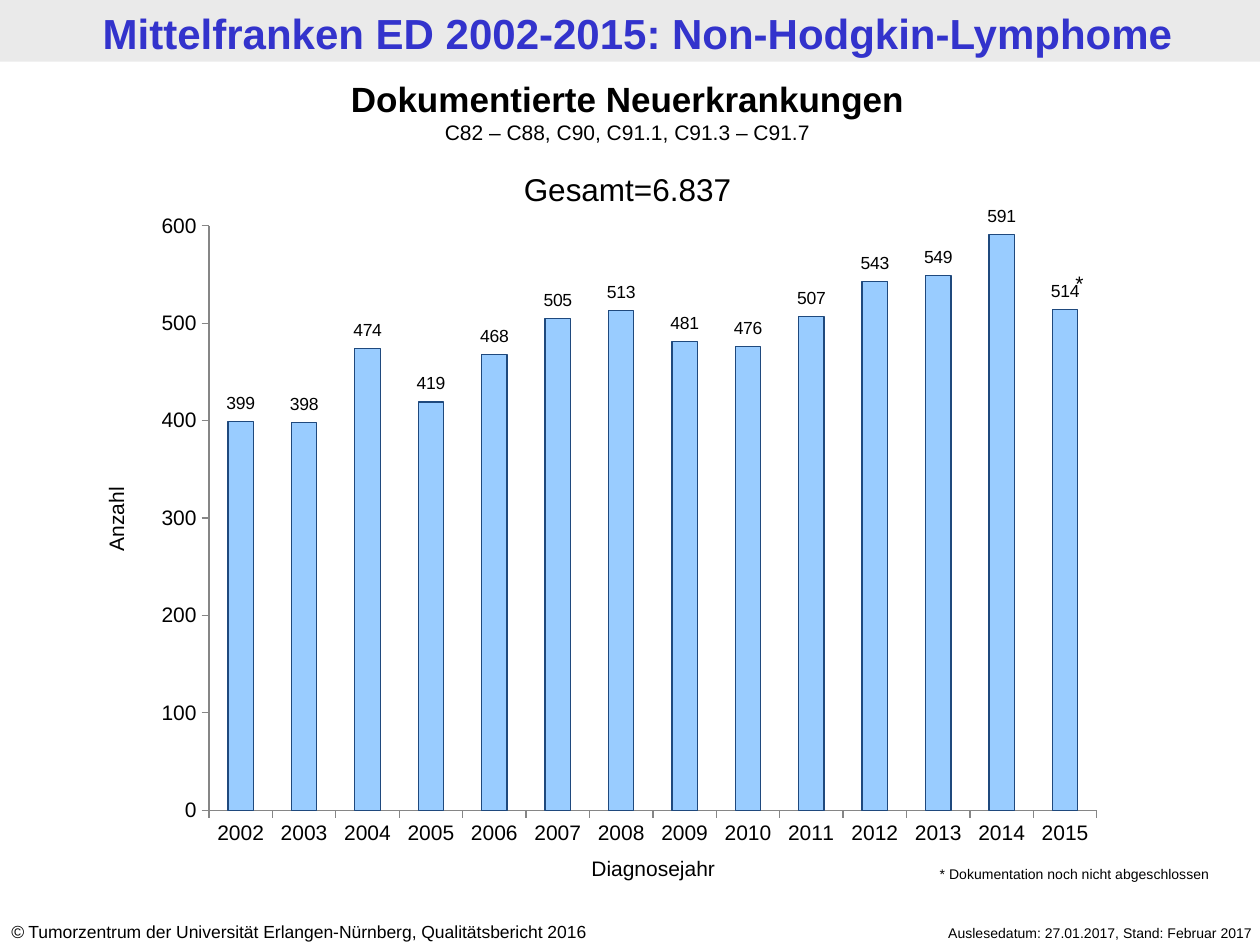
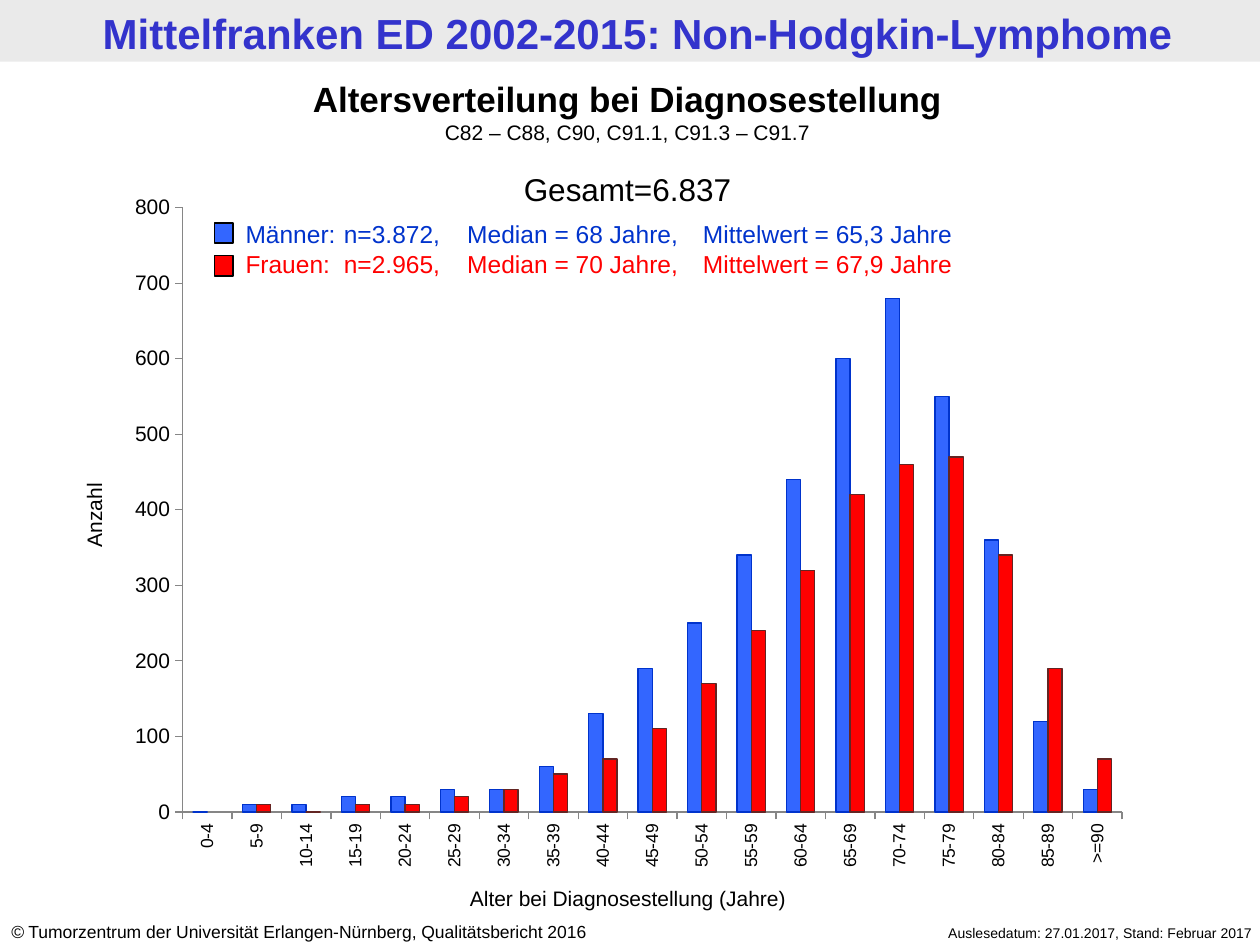
from lxml import etree
from pptx import Presentation
from pptx.chart import data as chart_data
from pptx.dml import color
from pptx.enum import chart as charts, shapes, text
from pptx.oxml import ns, xmlchemy
from pptx.util import Pt

FONT = "Arial"
BLACK, WHITE, BAND, TITLE, AXIS = "000000", "FFFFFF", "EAEAEA", "3333CC", "868686"
MEN, MEN_DARK, WOMEN, WOMEN_DARK = "3366FF", "0033CC", "FF0000", "632523"
CASES, CASES_DARK = "99CCFF", "1F497D"
LEFT, CENTER, RIGHT = text.PP_ALIGN.LEFT, text.PP_ALIGN.CENTER, text.PP_ALIGN.RIGHT
LABEL_RISE = 0.028


def rgb(value):
    return color.RGBColor.from_string(value)


def points(*lengths):
    return [Pt(length) for length in lengths]


def style(para, size, fill=BLACK, bold=False, align=LEFT):
    para.alignment = align
    para.font.name = FONT
    para.font.size = Pt(size)
    para.font.bold = bold
    para.font.color.rgb = rgb(fill)


def add_text(page, place, wording, size, align=LEFT, rotation=0):
    box = page.shapes.add_textbox(*points(*place))
    box.rotation = rotation
    box.text_frame.word_wrap = True
    para = box.text_frame.paragraphs[0]
    para.text = wording
    style(para, size, align=align)
    return box


def add_rectangle(page, place, fill, line=None):
    box = page.shapes.add_shape(shapes.MSO_SHAPE.RECTANGLE, *points(*place))
    box.shadow.inherit = False
    box.fill.solid()
    box.fill.fore_color.rgb = rgb(fill)
    if line:
        box.line.color.rgb = rgb(line)
        box.line.width = Pt(0.75)
    else:
        box.line.fill.background()
    return box


def add_title(page, wording):
    band = add_rectangle(page, (0, 0, 720, 35.3), BAND)
    page.shapes._spTree.insert(2, band._element)
    title = page.shapes.title
    title.left, title.top, title.width, title.height = points(4.3, 1.2, 720, 35.3)
    frame = title.text_frame
    frame.text = wording
    frame.auto_size = text.MSO_AUTO_SIZE.NONE
    frame.vertical_anchor = text.MSO_ANCHOR.MIDDLE
    frame.margin_top = frame.margin_bottom = Pt(3)
    style(frame.paragraphs[0], 24, TITLE, True, CENTER)


def add_footers(page):
    source = add_text(page, (-0.7, 522.7, 377, 19.4), "©", 10)
    para = source.text_frame.paragraphs[0]
    para.runs[0].font.italic = True
    span = para.add_run()
    span.text = " Tumorzentrum der Universität Erlangen-Nürnberg, Qualitätsbericht 2016"
    add_text(page, (478.8, 524.9, 244, 17.3),
             "Auslesedatum: 27.01.2017, Stand: Februar 2017", 8, RIGHT)


def add_heading(page, heading):
    box = add_text(page, (-2.9, 41, 723, 82), heading, 20, CENTER)
    frame = box.text_frame
    frame.paragraphs[0].font.bold = True
    codes = frame.add_paragraph()
    codes.text = "C82 – C88, C90, C91.1, C91.3 – C91.7"
    style(codes, 12, align=CENTER)
    total = frame.add_paragraph()
    total.text = "Gesamt=6.837"
    style(total, 18, align=CENTER)
    total.space_before = Pt(14)


def add_page(deck, heading):
    page = deck.slides.add_slide(deck.slide_layouts[5])
    page.background.fill.solid()
    page.background.fill.fore_color.rgb = rgb(WHITE)
    add_title(page, "Mittelfranken ED 2002-2015: Non-Hodgkin-Lymphome")
    add_footers(page)
    add_heading(page, heading)
    return page


def add_layout(parent, index, **settings):
    layout = xmlchemy.OxmlElement("c:layout")
    manual = etree.SubElement(layout, ns.qn("c:manualLayout"))
    for name, value in settings.items():
        etree.SubElement(manual, ns.qn(f"c:{name}")).set("val", str(value))
    for old in parent.findall(ns.qn("c:layout")):
        parent.remove(old)
    parent.insert(index, layout)


def format_axis(axis, size):
    axis.has_major_gridlines = False
    axis.major_tick_mark = charts.XL_TICK_MARK.OUTSIDE
    axis.minor_tick_mark = charts.XL_TICK_MARK.NONE
    axis.format.line.color.rgb = rgb(AXIS)
    axis.format.line.width = Pt(0.75)
    axis.tick_labels.font.name = FONT
    axis.tick_labels.font.size = Pt(size)
    axis.tick_labels.font.color.rgb = rgb(BLACK)


def add_columns(page, place, kind, categories, series, maximum, category_size, plot_area):
    source = chart_data.CategoryChartData()
    source.categories = categories
    for name, values, _, _ in series:
        source.add_series(name, values)
    chart = page.shapes.add_chart(kind, *points(*place), source).chart
    chart.has_legend = False
    chart.has_title = False
    chart.font.name = FONT
    chart.font.size = Pt(12)
    chart.font.color.rgb = rgb(BLACK)
    format_axis(chart.category_axis, category_size)
    format_axis(chart.value_axis, 12)
    chart.value_axis.minimum_scale = 0
    chart.value_axis.maximum_scale = maximum
    chart.value_axis.major_unit = 100
    plot = chart.plots[0]
    plot.gap_width = 150
    plot.vary_by_categories = False
    for bars, (_, _, fill, line) in zip(plot.series, series):
        bars.invert_if_negative = False
        bars.format.fill.solid()
        bars.format.fill.fore_color.rgb = rgb(fill)
        bars.format.line.color.rgb = rgb(line)
        bars.format.line.width = Pt(0.75)
    x, y, w, h = plot_area
    add_layout(chart._chartSpace.chart.plotArea, 0, layoutTarget="inner",
               xMode="edge", yMode="edge", x=x, y=y, w=w, h=h)
    return chart


def label_above_bars(bars, maximum, plot_height):
    for index, value in enumerate(bars.values):
        label = bars.points[index].data_label
        label.font.size = Pt(10)
        label.font.name = FONT
        label.font.color.rgb = rgb(BLACK)
        rise = value / maximum * plot_height / 2 + LABEL_RISE
        add_layout(label._get_or_add_dLbl(), 1, x=0, y=round(-rise, 4))
    for leader in bars.data_labels._element.findall(ns.qn("c:showLeaderLines")):
        leader.set("val", "0")


def add_legend(page, rows):
    box = page.shapes.add_textbox(*points(133.2, 121.7, 493.2, 41))
    frame = box.text_frame
    frame.word_wrap = True
    for index, (wording, fill, ink) in enumerate(rows):
        add_rectangle(page, (122.4, 127.4 + 18.8 * index, 10.8, 11.5), fill, BLACK)
        para = frame.add_paragraph() if index else frame.paragraphs[0]
        para.text = wording
        tabs = etree.SubElement(para._p.get_or_add_pPr(), ns.qn("a:tabLst"))
        for stop in (56.2, 126.7, 261.4):
            etree.SubElement(tabs, ns.qn("a:tab"), pos=str(Pt(stop)), algn="l")
        style(para, 14, ink)


def add_new_cases(deck):
    page = add_page(deck, "Dokumentierte Neuerkrankungen")
    values = [399, 398, 474, 419, 468, 505, 513, 481, 476, 507, 543, 549, 591, 514]
    years = [str(year) for year in range(2002, 2016)]
    plot_area = (0.066, 0.029, 0.914, 0.903)
    chart = add_columns(page, (82.8, 118.1, 555.1, 370.1),
                        charts.XL_CHART_TYPE.COLUMN_STACKED, years,
                        [("Neuerkrankungen", values, CASES, CASES_DARK)], 600, 12, plot_area)
    chart.plots[0].overlap = 100
    label_above_bars(chart.plots[0].series[0], 600, plot_area[3])
    add_text(page, (292.3, 485.3, 162, 21.6), "Diagnosejahr", 12, CENTER)
    add_text(page, (22.3, 285.8, 87.8, 21.6), "Anzahl", 12, CENTER, 270)
    add_text(page, (598.3, 151.2, 28, 21.6), "*", 12, RIGHT)
    add_text(page, (529.9, 491, 178.6, 17.3), "* Dokumentation noch nicht abgeschlossen", 8)


def add_age_distribution(deck):
    page = add_page(deck, "Altersverteilung bei Diagnosestellung")
    ages = [f"{age}-{age + 4}" for age in range(0, 90, 5)] + [">=90"]
    men = [0, 10, 10, 20, 20, 30, 30, 60, 130, 190, 250, 340, 440, 600, 680, 550, 360, 120, 30]
    women = [None, 10, 0, 10, 10, 20, 30, 50, 70, 110, 170, 240, 320, 420, 460, 470, 340, 190, 70]
    chart = add_columns(page, (65.5, 104.4, 587.5, 399.6),
                        charts.XL_CHART_TYPE.COLUMN_CLUSTERED, ages,
                        [("Männer", men, MEN, MEN_DARK), ("Frauen", women, WOMEN, WOMEN_DARK)],
                        800, 10, (0.066, 0.036, 0.914, 0.864))
    chart.plots[0].overlap = 0
    body = chart.category_axis._element.find(ns.qn("c:txPr")).find(ns.qn("a:bodyPr"))
    body.set("rot", "-5400000")
    body.set("vert", "horz")
    add_legend(page, [
        ("Männer:\tn=3.872,\tMedian = 68 Jahre,\tMittelwert = 65,3 Jahre", MEN, MEN_DARK),
        ("Frauen:\tn=2.965,\tMedian = 70 Jahre,\tMittelwert = 67,9 Jahre", WOMEN, WOMEN),
    ])
    add_text(page, (248.4, 502.6, 221, 21.6), "Alter bei Diagnosestellung (Jahre)", 12, CENTER)
    add_text(page, (-40.3, 283.7, 188, 21.6), "Anzahl", 12, CENTER, 270)


def main():
    deck = Presentation()
    deck.slide_width, deck.slide_height = points(720, 540)
    add_new_cases(deck)
    add_age_distribution(deck)
    deck.save("out.pptx")


if __name__ == "__main__":
    main()
